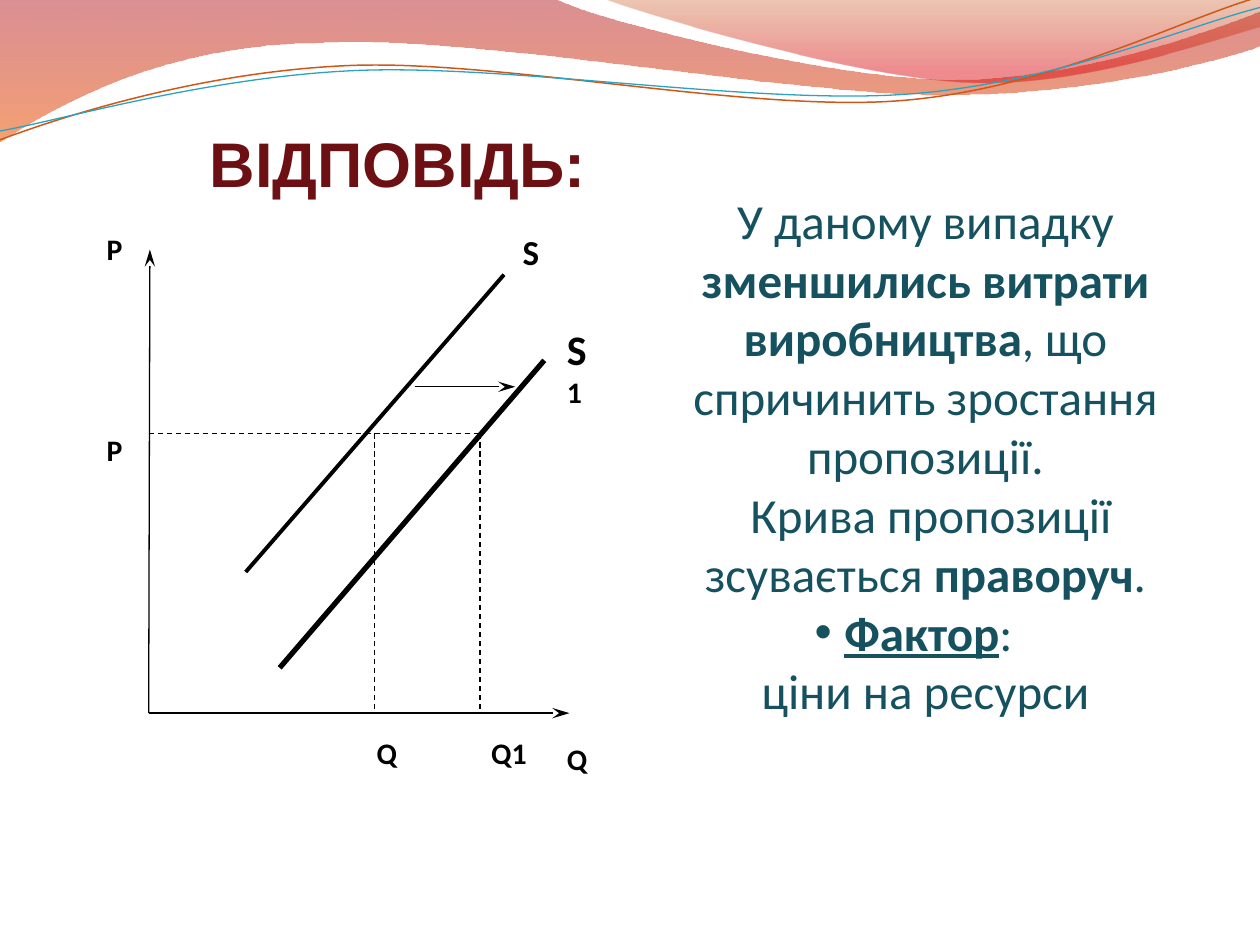
import math

import pptx
import pptx.util
import pptx.dml.color
import pptx.enum.dml
import pptx.enum.shapes
import pptx.enum.text
from lxml import etree
from pptx.oxml import ns

Inches, Pt = pptx.util.Inches, pptx.util.Pt
ALIGN = pptx.enum.text.PP_ALIGN


def rgb(value):
    return pptx.dml.color.RGBColor.from_string(value)


prs = pptx.Presentation()
prs.slide_width, prs.slide_height = Inches(10), Inches(7.5)
s = prs.slides.add_slide(prs.slide_layouts[6])

# Waves: a segment of two numbers is a line, one of six a Bezier curve.
# Bands have gradient stops (position, colour, opacity %); strokes are tilted about a centre.
waves = [
    {"points": [(0, -0.01), (4.4, -0.01), (4.76, 0.17, 6.64, 0.63, 7.58, 0.63),
                (8.53, 0.63, 9.58, 0.26, 10, 0.09), (10.01, 0.36),
                (9.83, 0.44, 8.7, 0.76, 7.46, 0.75), (6.22, 0.75, 3.82, 0.28, 2.57, 0.34),
                (1.29, 0.35, 0.46, 0.83, -0.01, 1.13), (0, -0.01)],
     "stops": [(0, "AF0911", 45), (1, "EE5300", 55)]},
    {"points": [(4.79, -0.01), (5.09, 0.11, 6.82, 0.62, 7.69, 0.65),
                (8.56, 0.69, 9.61, 0.32, 10, 0.21), (10, 0), (4.79, -0.01)],
     "stops": [(0, "C24400", 30), (0.8, "DC000B", 45)]},
    {"points": [(0, 1.11), (0.48, 0.93, 1.58, 0.57, 2.77, 0.52),
                (3.95, 0.47, 5.93, 0.89, 7.13, 0.8), (8.33, 0.71, 9.38, 0.15, 9.98, -0.02)],
     "center": (4.99, 0.57), "color": "CF5818", "width": 0.85},
    {"points": [(0, 1.04), (0.47, 0.96, 1.64, 0.61, 2.83, 0.56),
                (4.03, 0.51, 5.97, 0.83, 7.17, 0.75), (8.36, 0.67, 9.41, 0.21, 10, 0.06)],
     "center": (5, 0.59), "color": "2DA2BF", "width": 0.75},
]
tilt = 2.7
cos, sin = math.cos(math.radians(tilt)), math.sin(math.radians(tilt))
for wave in waves:
    is_band = "stops" in wave
    pts = [seg[i:i + 2] for seg in wave["points"] for i in range(0, len(seg), 2)]
    if not is_band:
        cx, cy = wave["center"]
        pts = [(cx + (x - cx) * cos - (y - cy) * sin, cy + (x - cx) * sin + (y - cy) * cos)
               for x, y in pts]
    pts = [(Inches(x), Inches(y)) for x, y in pts]
    builder = s.shapes.build_freeform(*pts[0])
    builder.add_line_segments(pts[1:], close=is_band)
    sp = builder.convert_to_shape()
    sp.shadow.inherit = False

    # Join the three points of each curve into one Bezier segment
    outline = sp._element.find(".//" + ns.qn("a:path"))
    vertices = iter(outline.findall(ns.qn("a:lnTo")))
    for seg in wave["points"][1:]:
        vertex = next(vertices)
        if len(seg) == 6:
            curve = outline.makeelement(ns.qn("a:cubicBezTo"))
            vertex.addprevious(curve)
            for old in (vertex, next(vertices), next(vertices)):
                curve.append(old[0])
                outline.remove(old)

    if is_band:
        sp.line.fill.background()
        sp.fill.gradient()
        sp.fill.gradient_angle = 270
        elements = sp._element.findall(".//" + ns.qn("a:gs"))
        for stop, element, (position, color, opacity) in zip(
                sp.fill.gradient_stops, elements, wave["stops"]):
            stop.position = position
            stop.color.rgb = rgb(color)
            etree.SubElement(element[0], ns.qn("a:alpha"), val=str(opacity * 1000))
    else:
        sp.rotation = 360 - tilt
        sp.fill.background()
        sp.line.color.rgb = rgb(wave["color"])
        sp.line.width = Pt(wave["width"])

# Supply graph: axes, curves, guides and the shift arrow
left, bottom, price, q, q1 = 1.18, 5.66, 3.44, 2.97, 3.81
lines = [
    (left, price, q1, price, 0.75, "dash"),
    (q1, price, q1, 5.64, 0.75, "dash"),
    (q, price, q, 5.64, 0.75, "dash"),
    (1.95, 4.54, 4, 2.18, 2.25, None),
    (2.22, 5.3, 4.32, 2.86, 3, None),
    (left, bottom, 1.19, 1.98, 0.75, "arrow"),
    (left, bottom, 4.52, bottom, 0.75, "arrow"),
    (3.29, 3.07, 4.09, 3.07, 0.75, "arrow"),
]
for x1, y1, x2, y2, width, style in lines:
    cn = s.shapes.add_connector(pptx.enum.shapes.MSO_CONNECTOR.STRAIGHT,
                                Inches(x1), Inches(y1), Inches(x2), Inches(y2))
    cn.line.color.rgb = rgb("000000")
    cn.line.width = Pt(width)
    if style == "dash":
        cn.line.dash_style = pptx.enum.dml.MSO_LINE.DASH
    if style == "arrow":
        etree.SubElement(cn.line._get_or_add_ln(), ns.qn("a:tailEnd"),
                         type="stealth", w="med", len="lg")
    etree.SubElement(cn._element.spPr, ns.qn("a:effectLst"))


def add_text(box, paragraphs, align, color="000000", font="Calibri", after=0, top=0.05,
             tabs=(), bullets=()):
    """Add a text box; paragraphs are lists of (text, font attributes) runs."""
    tf = s.shapes.add_textbox(*map(Inches, box)).text_frame
    tf.word_wrap = True
    tf.margin_top = Inches(top)
    for i, runs in enumerate(paragraphs):
        p = tf.paragraphs[0] if i == 0 else tf.add_paragraph()
        p.alignment = align
        p.space_after = Pt(after)
        pPr = p._p.get_or_add_pPr()
        if i in bullets:
            etree.SubElement(pPr, ns.qn("a:buFont"), typeface="Arial")
            etree.SubElement(pPr, ns.qn("a:buChar"), char="•")
        if tabs:
            tab_list = etree.SubElement(pPr, ns.qn("a:tabLst"))
            for tab in tabs:
                etree.SubElement(tab_list, ns.qn("a:tab"), pos=str(Inches(tab)), algn="l")
        for text, fmt in runs:
            r = p.add_run()
            r.text = text
            r.font.name = font
            r.font.color.rgb = rgb(color)
            for name, value in fmt.items():
                setattr(r.font, name, value)


label = {"size": Pt(17), "bold": True}
plain = {"size": Pt(28), "bold": False}
strong = {"size": Pt(28), "bold": True}

# Graph labels
add_text((1.6, 5.78, 2.88, 0.44), [[("\tQ\tQ1", label)]], ALIGN.LEFT, after=10, tabs=(1.29, 2.2))
add_text((0.47, 1.78, 0.6, 0.74), [[("Р", label)]], ALIGN.RIGHT, after=10)
add_text((0.59, 2.7, 0.48, 1.1), [[("Р", label)]], ALIGN.RIGHT, after=10, top=0.73)
add_text((4.4, 5.83, 0.6, 0.74), [[("Q", label)]], ALIGN.LEFT, after=10)
add_text((4.05, 1.78, 0.36, 0.55), [[("S", {"size": Pt(20), "bold": True})]], ALIGN.LEFT, after=10)
add_text((4.4, 2.52, 0.48, 0.55), [[("S ", {"size": Pt(24), "bold": True}), ("1", label)]],
         ALIGN.LEFT, after=10)

# Explanation and title
add_text((5.08, 1.47, 4.53, 4.3), [
    [("У даному випадку ", plain), ("зменшились витрати виробництва", strong),
     (", що спричинить зростання пропозиції.", plain)],
    [(" Крива пропозиції зсувається ", plain), ("праворуч", strong), (".", plain)],
    [("Фактор", strong | {"underline": True}), (": ", plain)],
    [("ціни на ресурси", plain)],
], ALIGN.CENTER, color="165160", top=0.04, bullets=(2,))
add_text((1.48, 0.94, 3.36, 0.71), [[("ВІДПОВІДЬ:", {"size": Pt(36), "bold": True})]],
         ALIGN.CENTER, color="6D1014", font="Arial")

prs.save("out.pptx")
